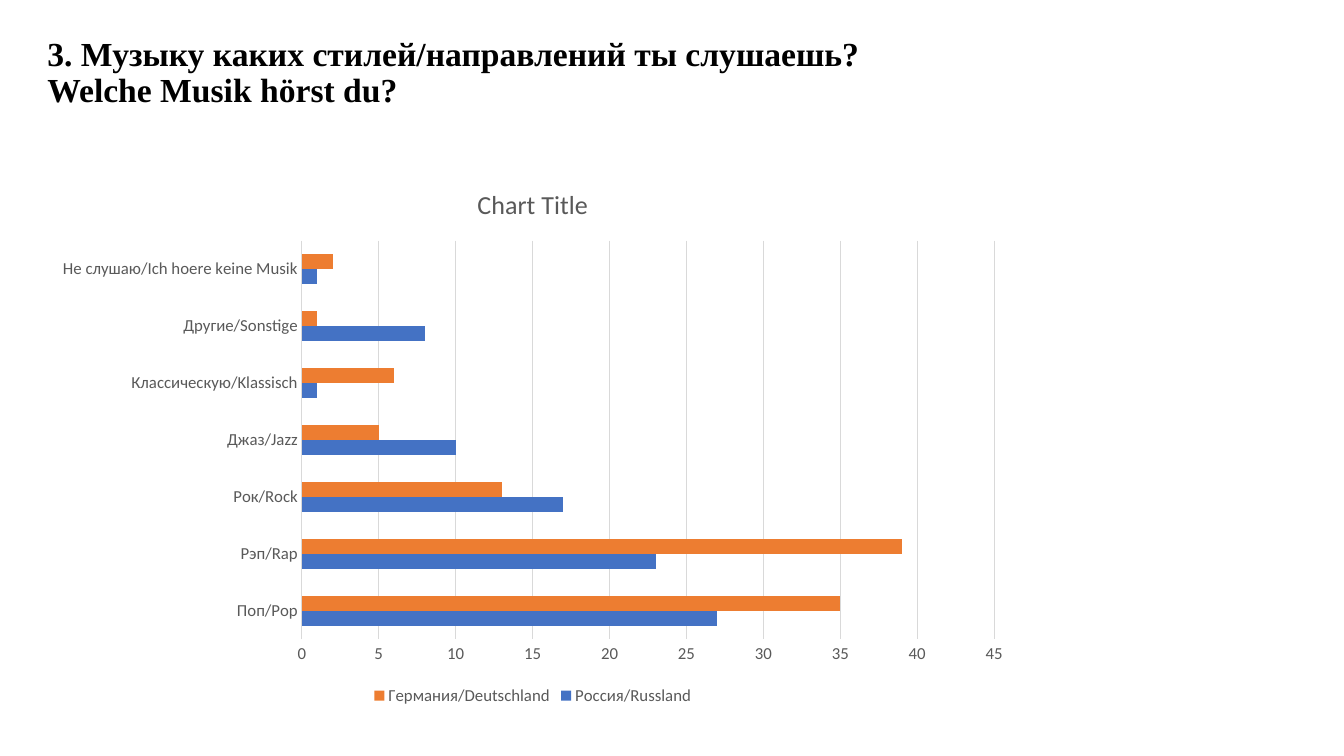
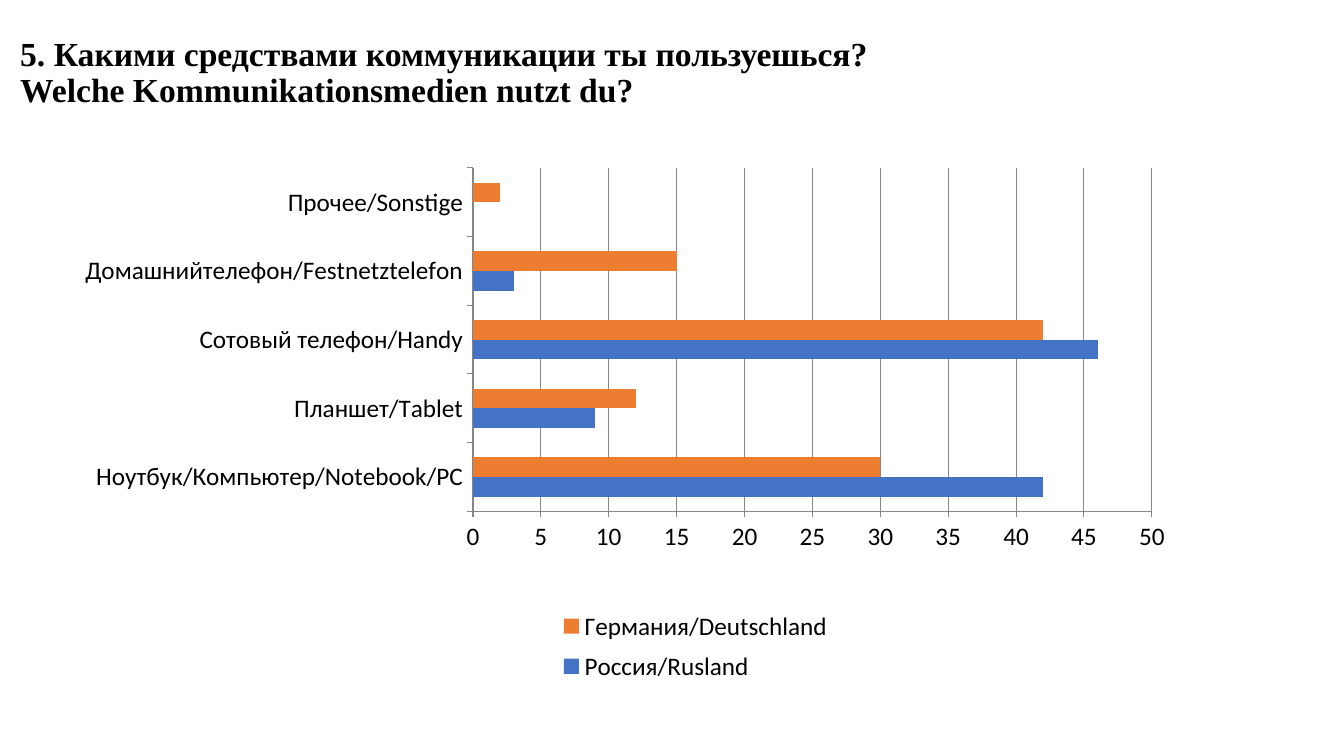
from lxml import etree
from pptx import Presentation
from pptx.chart.data import CategoryChartData
from pptx.dml.color import RGBColor
from pptx.enum.chart import XL_CHART_TYPE, XL_LEGEND_POSITION as LEGEND, XL_TICK_MARK as TICK
from pptx.enum.text import MSO_ANCHOR, MSO_AUTO_SIZE, PP_ALIGN
from pptx.oxml.ns import qn
from pptx.util import Inches, Pt

BLACK = RGBColor(0x00, 0x00, 0x00)
DARK_GRAY = RGBColor(0x59, 0x59, 0x59)
MID_GRAY = RGBColor(0x86, 0x86, 0x86)
LIGHT_GRAY = RGBColor(0xD9, 0xD9, 0xD9)
BLUE = RGBColor(0x44, 0x72, 0xC4)
ORANGE = RGBColor(0xED, 0x7D, 0x31)

SURVEY = [
    dict(
        title="3. Музыку каких стилей/направлений ты слушаешь?\vWelche Musik hörst du?",
        title_left=0.37,
        categories=["Поп/Pop", "Рэп/Rap", "Рок/Rock", "Джаз/Jazz", "Классическую/Klassisch",
                    "Другие/Sonstige", "Не слушаю/Ich hoere keine Musik"],
        series=[("Россия/Russland", [27, 23, 17, 10, 1, 8, 1], BLUE),
                ("Германия/Deutschland", [35, 39, 13, 5, 6, 1, 2], ORANGE)],
        box=(0.43, 1.64, 9.71, 5.4), chart_title="Chart Title",
        size=12, color=DARK_GRAY, line_color=LIGHT_GRAY, tick=TICK.NONE,
        maximum=45, gap=182, legend=LEGEND.BOTTOM, layouts={},
    ),
    dict(
        title="5. Какими средствами коммуникации ты пользуешься?\v"
              "Welche Kommunikationsmedien nutzt du?",
        title_left=0.1,
        categories=["Ноутбук/Компьютер/Notebook/PC", "Планшет/Tablet", "Сотовый телефон/Handy",
                    "Домашнийтелефон/Festnetztelefon", "Прочее/Sonstige"],
        series=[("Россия/Rusland", [42, 9, 46, 3, 0], BLUE),
                ("Германия/Deutschland", [30, 12, 42, 15, 2], ORANGE)],
        box=(0.28, 1.66, 11.61, 5.25), chart_title=None,
        size=18, color=BLACK, line_color=MID_GRAY, tick=TICK.OUTSIDE,
        maximum=50, gap=150, legend=LEGEND.RIGHT,
        layouts={"c:plotArea": (0.38, 0, 0.58, 0.65), "c:legend": (0.42, 0.82, 0.3, 0.17)},
    ),
]


def write_text(text_frame, text, size, color, font="Calibri", bold=False, align=PP_ALIGN.LEFT):
    text_frame.text = text
    paragraph = text_frame.paragraphs[0]
    paragraph.alignment = align
    paragraph.line_spacing = 0.9
    for run in paragraph.runs:
        run.font.name = font
        run.font.size = Pt(size)
        run.font.bold = bold
        run.font.color.rgb = color


def set_layout(chart, tag, fractions):
    """Place the plot area or legend at fractions (x, y, w, h) of the chart."""
    part = chart.element.find(".//" + qn(tag))
    for old_layout in part.findall(qn("c:layout")):
        part.remove(old_layout)
    layout = etree.Element(qn("c:layout"))
    manual = etree.SubElement(layout, qn("c:manualLayout"))
    settings = [("layoutTarget", "inner")] if tag == "c:plotArea" else []
    settings += [("xMode", "edge"), ("yMode", "edge")]
    settings += zip("xywh", fractions)
    for name, value in settings:
        etree.SubElement(manual, qn("c:" + name)).set("val", str(value))
    part.insert(1 if tag == "c:legend" else 0, layout)


presentation = Presentation()
presentation.slide_width = Inches(13.33)
presentation.slide_height = Inches(7.5)

for question in SURVEY:
    slide = presentation.slides.add_slide(presentation.slide_layouts[5])
    title = slide.shapes.title
    title.left, title.top = Inches(question["title_left"]), Inches(0.01)
    title.width, title.height = Inches(9.4), Inches(1.44)
    title.text_frame.auto_size = MSO_AUTO_SIZE.NONE
    title.text_frame.vertical_anchor = MSO_ANCHOR.MIDDLE
    write_text(title.text_frame, question["title"], 24, BLACK, font="Times New Roman", bold=True)

    data = CategoryChartData(number_format="General")
    data.categories = question["categories"]
    for name, values, _ in question["series"]:
        data.add_series(name, values)
    box = [Inches(length) for length in question["box"]]
    chart = slide.shapes.add_chart(XL_CHART_TYPE.BAR_CLUSTERED, *box, data).chart
    chart.font.name = "Calibri"
    chart.font.size = Pt(question["size"])
    chart.font.color.rgb = question["color"]

    chart.has_title = question["chart_title"] is not None
    if chart.has_title:
        write_text(chart.chart_title.text_frame, question["chart_title"], 18.6, DARK_GRAY,
                   align=PP_ALIGN.CENTER)
        chart.chart_title.include_in_layout = False

    plot = chart.plots[0]
    plot.gap_width = question["gap"]
    plot.vary_by_categories = False
    for series, (_, _, color) in zip(plot.series, question["series"]):
        series.invert_if_negative = False
        series.format.fill.solid()
        series.format.fill.fore_color.rgb = color

    value_axis = chart.value_axis
    value_axis.minimum_scale = 0
    value_axis.maximum_scale = question["maximum"]
    value_axis.major_unit = 5
    value_axis.has_major_gridlines = True
    for axis in (chart.category_axis, value_axis):
        axis.major_tick_mark = question["tick"]
        axis.minor_tick_mark = TICK.NONE
    for line in (chart.category_axis.format.line, value_axis.format.line,
                 value_axis.major_gridlines.format.line):
        line.color.rgb = question["line_color"]
        line.width = Pt(0.75)
    if question["tick"] == TICK.NONE:
        value_axis.format.line.fill.background()

    chart.has_legend = True
    chart.legend.position = question["legend"]
    chart.legend.include_in_layout = False
    for tag, fractions in question["layouts"].items():
        set_layout(chart, tag, fractions)

presentation.save("out.pptx")
